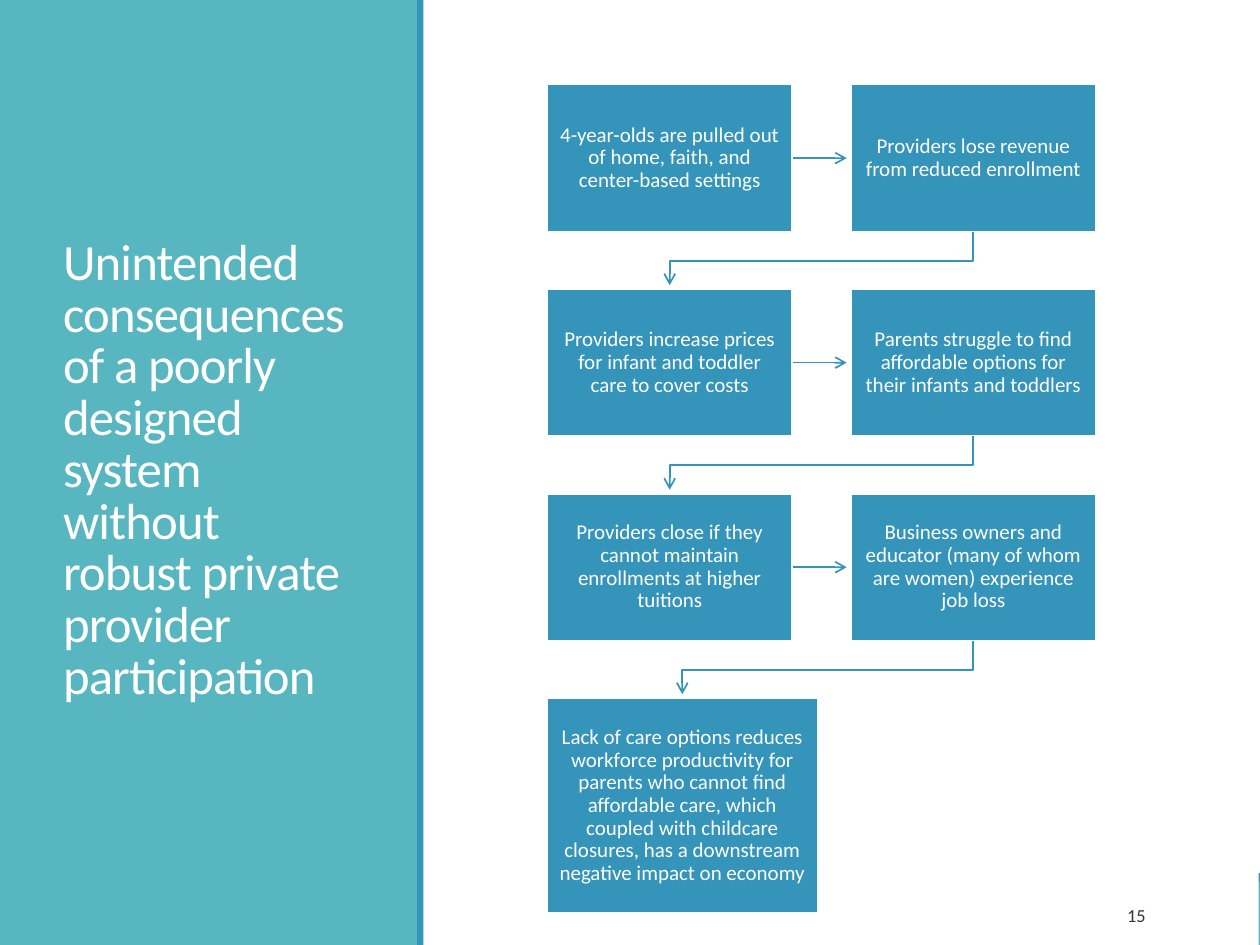
"""Build the slide on unintended consequences as a stepped flow of boxes."""
from dataclasses import dataclass

from lxml import etree
from pptx import Presentation
from pptx.dml.color import RGBColor
from pptx.enum.shapes import MSO_CONNECTOR, MSO_SHAPE
from pptx.enum.text import MSO_ANCHOR, MSO_AUTO_SIZE, PP_ALIGN
from pptx.oxml.ns import qn
from pptx.util import Inches, Pt

RECT = MSO_SHAPE.RECTANGLE
LINE = MSO_CONNECTOR.STRAIGHT
MIDDLE = MSO_ANCHOR.MIDDLE
FIXED = MSO_AUTO_SIZE.NONE
LEFT, CENTER, RIGHT = PP_ALIGN.LEFT, PP_ALIGN.CENTER, PP_ALIGN.RIGHT

TEAL, BLUE, WHITE, DARK = "58B6C0", "3494BA", "FFFFFF", "373545"
FONT = "Calibri"
WIDE, HIGH = 10, 7.5
GRID_X, GRID_Y = 4.34, 0.67
STEP_X, STEP_Y = 2.41, (5.54 - GRID_Y) / 3
BOX_W, BOX_H = 1.95, 1.17
GAP = 0.03
DROP = 0.23


@dataclass
class Box:
    """A step of the flow, placed by column and row."""
    col: int
    row: int
    text: str
    wide: float = BOX_W
    high: float = BOX_H

    @property
    def left(self) -> float:
        return GRID_X + self.col * STEP_X

    @property
    def top(self) -> float:
        return GRID_Y + self.row * STEP_Y

    @property
    def mid(self) -> float:
        return self.left + self.wide / 2


STEPS = [
    Box(0, 0, "4-year-olds are pulled out of home, faith, and center-based settings"),
    Box(1, 0, "Providers lose revenue from reduced enrollment"),
    Box(0, 1, "Providers increase prices for infant and toddler care to cover costs"),
    Box(1, 1, "Parents struggle to find affordable options for their infants and toddlers"),
    Box(0, 2, "Providers close if they cannot maintain enrollments at higher tuitions"),
    Box(1, 2, "Business owners and educator (many of whom are women) experience job loss"),
    Box(0, 3, "Lack of care options reduces workforce productivity for parents who cannot "
        "find affordable care, which coupled with childcare closures, has a downstream "
        "negative impact on economy", 2.15, 1.71),
]


def paint(fmt, hue: str) -> None:
    """Give a fill a solid colour."""
    fmt.solid()
    fmt.fore_color.rgb = RGBColor.from_string(hue)


def write(shape, text: str, size: float, hue: str, align, space: float = 1) -> None:
    """Put one run of text in a shape."""
    frame = shape.text_frame
    frame.word_wrap = True
    frame.auto_size = FIXED
    frame.vertical_anchor = MIDDLE
    para = frame.paragraphs[0]
    para.alignment = align
    para.line_spacing = space
    run = para.add_run()
    run.text = text
    run.font.name = FONT
    run.font.size = Pt(size)
    paint(run.font.fill, hue)


def block(slide, left: float, top: float, wide: float, high: float, hue: str):
    """Draw a plain rectangle without an outline."""
    shape = slide.shapes.add_shape(
        RECT, Inches(left), Inches(top), Inches(wide), Inches(high))
    shape.shadow.inherit = False
    paint(shape.fill, hue)
    shape.line.fill.background()
    return shape


def base(slide) -> None:
    """Put the two foot bars on the layout."""
    tree = slide.slide_layout.shapes[0].element.getparent()
    for top, high, hue in [(7, 0.5, TEAL), (6.93, 0.07, BLUE)]:
        tree.append(block(slide, 0, top, WIDE, high, hue).element)


def card(slide, box: Box):
    """Draw one step with its text."""
    shape = block(slide, box.left, box.top, box.wide, box.high, BLUE)
    paint(shape.line.fill, WHITE)
    shape.line.width = Pt(1.25)
    frame = shape.text_frame
    frame.margin_left = frame.margin_right = Inches(0.1)
    frame.margin_top = frame.margin_bottom = Inches(0.1)
    write(shape, box.text, 12, WHITE, CENTER, 0.9)
    return shape


def point(line) -> None:
    """Style a line and put an open arrowhead at its end."""
    paint(line.line.fill, BLUE)
    line.line.width = Pt(1)
    props = line.element.spPr
    etree.SubElement(props.find(qn("a:ln")), qn("a:tailEnd"), type="arrow")
    if props.find(qn("a:effectLst")) is None:
        etree.SubElement(props, qn("a:effectLst"))


def across(slide, start: Box, goal: Box, shape) -> None:
    """Draw an arrow to the next box in the row."""
    y = Inches(start.top + start.high / 2)
    line = slide.shapes.add_connector(
        LINE, Inches(start.left + start.wide), y, Inches(goal.left - GAP), y)
    line.begin_connect(shape, 3)
    point(line)


def down(slide, start: Box, goal: Box) -> None:
    """Draw a bent arrow to the first box of the next row."""
    foot = start.top + start.high
    turn = foot + DROP
    path = slide.shapes.build_freeform(Inches(start.mid), Inches(foot))
    spots = [(start.mid, turn), (goal.mid, turn), (goal.mid, goal.top - GAP)]
    path.add_line_segments([(Inches(x), Inches(y)) for x, y in spots], close=False)
    line = path.convert_to_shape()
    line.shadow.inherit = False
    line.fill.background()
    point(line)


def head(slide, text: str) -> None:
    """Place the title over the side panel."""
    title = slide.shapes.title
    title.left, title.top = Inches(0.4), Inches(0.66)
    title.width, title.height = Inches(2.53), Inches(6.17)
    write(title, text, 29, WHITE, LEFT, 0.85)
    for props in title.element.iter(qn("a:rPr")):
        props.set("spc", "-50")
    title.element.getparent().append(title.element)


def main() -> None:
    """Build and save the slide."""
    deck = Presentation()
    deck.slide_width, deck.slide_height = Inches(WIDE), Inches(HIGH)
    slide = deck.slides.add_slide(deck.slide_layouts[5])
    paint(slide.background.fill, WHITE)

    base(slide)
    block(slide, 0, 0, WIDE - 0.01, HIGH, WHITE)
    block(slide, 0, 0, 3.32, HIGH, TEAL)
    head(slide, "Unintended consequences of a poorly designed system "
         "without robust private provider participation")
    block(slide, 3.31, 0, 0.05, HIGH, BLUE)

    cards = [card(slide, box) for box in STEPS]
    for start, goal, shape in zip(STEPS, STEPS[1:], cards):
        if start.row == goal.row:
            across(slide, start, goal, shape)
        else:
            down(slide, start, goal)

    page = slide.shapes.add_textbox(
        Inches(8.3), Inches(7.06), Inches(0.89), Inches(0.4))
    write(page, "15", 10.5, DARK, RIGHT)
    page.text_frame.paragraphs[0].space_after = Pt(6)
    deck.save("out.pptx")


if __name__ == "__main__":
    main()
